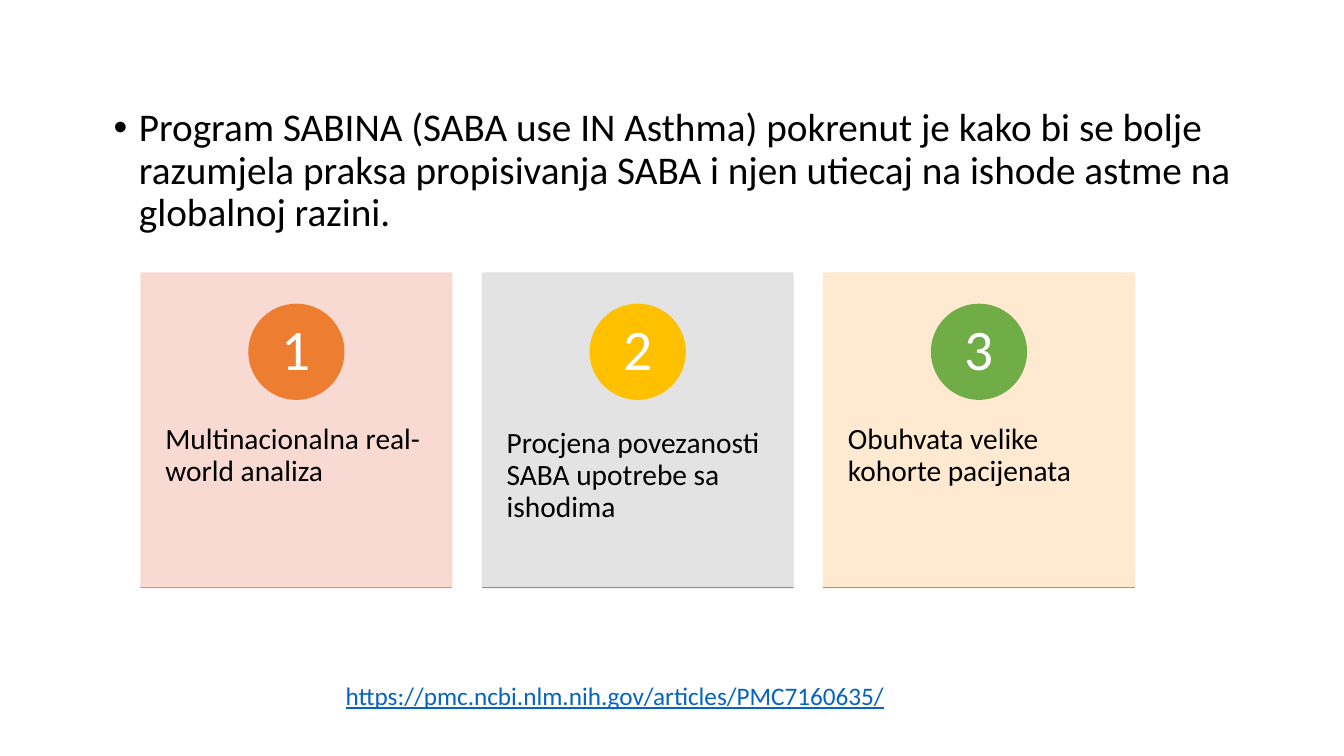
from lxml import etree
from pptx import Presentation
from pptx.dml.color import RGBColor
from pptx.enum import shapes, text
from pptx.oxml.ns import qn
from pptx.util import Inches, Pt

# Content
INTRO = ("Program SABINA (SABA use IN Asthma) pokrenut je kako bi se bolje razumjela "
         "praksa propisivanja SABA i njen utiecaj na ishode astme na globalnoj razini.")
CARDS = [  # caption, card colour, badge colour, base line colour
    ("Multinacionalna real-world analiza", "F8D7CE", "ED7D31", "A5A5A5"),
    ("Procjena povezanosti SABA upotrebe sa ishodima", "E1E1E1", "FFC000", "5B9BD5"),
    ("Obuhvata velike kohorte pacijenata", "FFE8CC", "70AD47", "ED7D31"),
]
SOURCE = "https://pmc.ncbi.nlm.nih.gov/articles/PMC7160635/"

THEME = {
    "font": "Calibri", "ink": "000000", "white": "FFFFFF", "link": "0563C1",
    "intro": 28, "caption": 21, "number": 41, "source": 18,
}

# Layout, in inches
CARD_LEFT, CARD_TOP, CARD_W, CARD_H = 1.4, 2.71, 3.08, 3.12
CARD_STEP = 3.385
CAPTION_TOP, CAPTION_H = 3.89, 1.87
BADGE_TOP, BADGE_SIZE, NUMBER_SIZE = 3.02, 0.94, 0.66

prs = Presentation()
prs.slide_width, prs.slide_height = Inches(13.33), Inches(7.5)
slide = prs.slides.add_slide(prs.slide_layouts[6])


def add_text(words, box, size, color=THEME["ink"], align=text.PP_ALIGN.LEFT,
             anchor=text.MSO_ANCHOR.TOP, insets=(0.1, 0.05), spacing=0.9,
             bullet=False, underline=None):
    frame = slide.shapes.add_textbox(*map(Inches, box)).text_frame
    frame.word_wrap = True
    frame.vertical_anchor = anchor
    frame.margin_left = frame.margin_right = Inches(insets[0])
    frame.margin_top = frame.margin_bottom = Inches(insets[1])
    paragraph = frame.paragraphs[0]
    paragraph.alignment = align
    paragraph.line_spacing = spacing
    if bullet:
        props = paragraph._p.get_or_add_pPr()
        props.set("marL", str(Inches(0.25)))
        props.set("indent", str(-Inches(0.25)))
        bullet_font = etree.SubElement(props, qn("a:buFont"))
        bullet_font.set("typeface", "Arial")
        etree.SubElement(props, qn("a:buChar")).set("char", "•")
    run = paragraph.add_run()
    run.text = words
    run.font.name = THEME["font"]
    run.font.size = Pt(size)
    run.font.color.rgb = RGBColor.from_string(color)
    run.font.underline = underline


def add_block(kind, box, color, opacity=100):
    block = slide.shapes.add_shape(kind, *map(Inches, box))
    block.shadow.inherit = False
    block.fill.solid()
    block.fill.fore_color.rgb = RGBColor.from_string(color)
    block.line.color.rgb = RGBColor.from_string(color)
    block.line.width = Pt(1)
    if opacity < 100:
        for tint in block._element.spPr.iter(qn("a:srgbClr")):
            etree.SubElement(tint, qn("a:alpha")).set("val", str(opacity * 1000))


# Introduction and source address
add_text(INTRO, (1.03, 1.02, 11.5, 3.12), THEME["intro"], bullet=True)
add_text(SOURCE, (3.33, 6.7, 6.67, 0.71), THEME["source"], color=THEME["link"],
         spacing=1.0, underline=True)

# Numbered cards
for index, (caption, card_color, badge_color, base_color) in enumerate(CARDS):
    left = CARD_LEFT + index * CARD_STEP
    badge_left = left + (CARD_W - BADGE_SIZE) / 2
    inset = (BADGE_SIZE - NUMBER_SIZE) / 2
    add_block(shapes.MSO_SHAPE.RECTANGLE, (left, CARD_TOP, CARD_W, CARD_H),
              card_color, opacity=90)
    add_text(caption, (left, CAPTION_TOP, CARD_W, CAPTION_H), THEME["caption"],
             insets=(0.24, 0.36))
    add_block(shapes.MSO_SHAPE.OVAL, (badge_left, BADGE_TOP, BADGE_SIZE, BADGE_SIZE),
              badge_color)
    add_text(str(index + 1),
             (badge_left + inset, BADGE_TOP + inset, NUMBER_SIZE, NUMBER_SIZE),
             THEME["number"], color=THEME["white"], align=text.PP_ALIGN.CENTER,
             anchor=text.MSO_ANCHOR.MIDDLE, insets=(0.07, 0.01))
    add_block(shapes.MSO_SHAPE.RECTANGLE, (left, CARD_TOP + CARD_H, CARD_W, 0), base_color)

prs.save("out.pptx")
